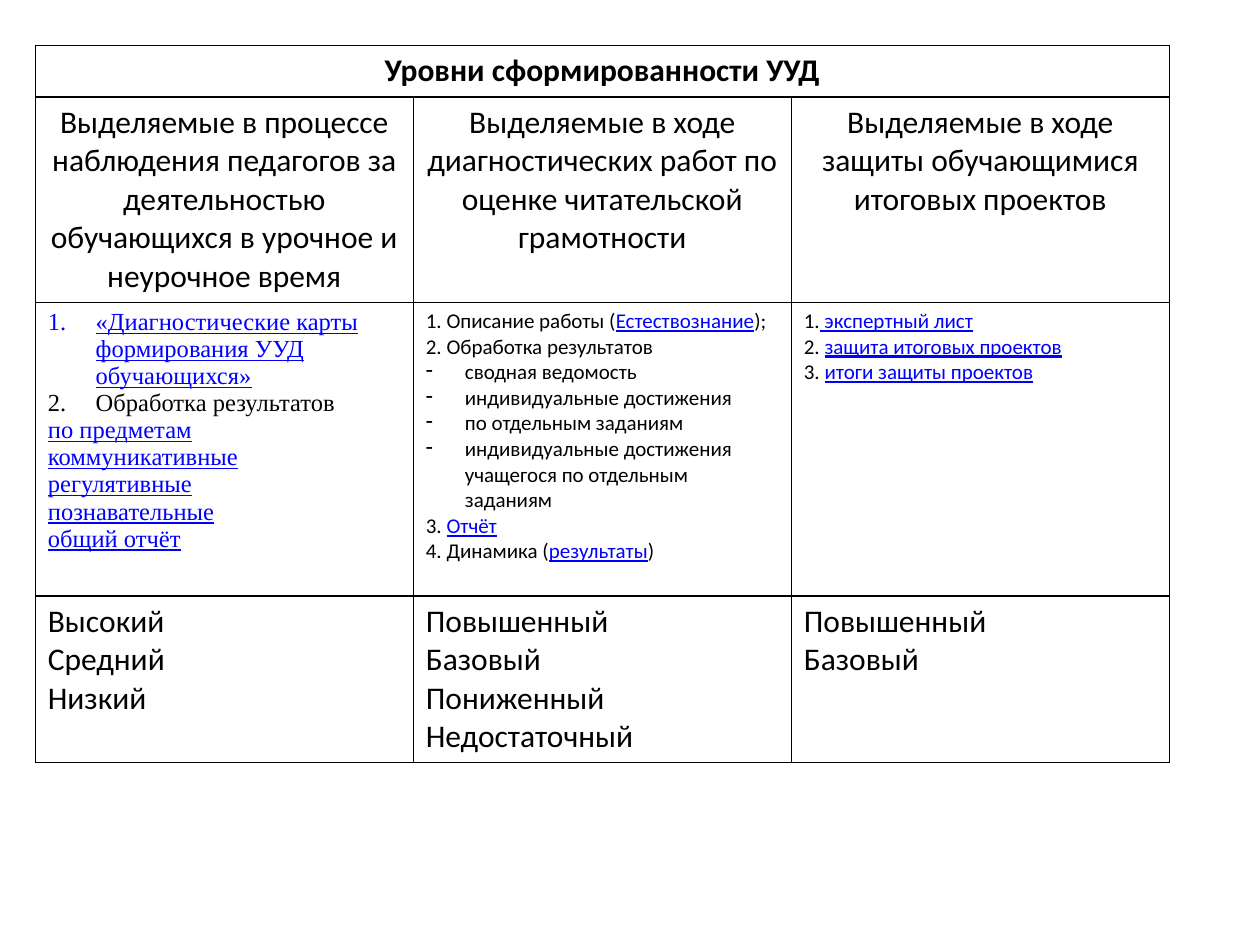
from lxml.etree import SubElement
from pptx import Presentation
from pptx.dml.color import RGBColor
from pptx.enum.text import PP_ALIGN
from pptx.oxml.ns import qn
from pptx.util import Inches, Pt

COLORS = {"text": "000000", "link": "0000FF", "paper": "FFFFFF"}

# "[...]" marks underlined link wording; a leading "# " or "- " marks a list item.
TITLE = "Уровни сформированности УУД"
METHODS = [
    "Выделяемые в процессе наблюдения педагогов за деятельностью "
    "обучающихся в урочное и неурочное время",
    "Выделяемые в ходе диагностических работ по оценке читательской грамотности",
    "Выделяемые в ходе защиты обучающимися итоговых проектов",
]
MATERIALS = [
    ["# [«Диагностические карты формирования УУД обучающихся»]",
     "# Обработка результатов",
     "[по предметам]", "[коммуникативные]", "[регулятивные]",
     "[познавательные]", "[общий отчёт]"],
    ["1. Описание работы ([Естествознание]);",
     "2. Обработка результатов",
     "- сводная ведомость",
     "- индивидуальные достижения",
     "- по отдельным заданиям",
     "- индивидуальные достижения учащегося по отдельным заданиям",
     "3. [Отчёт]",
     "4. Динамика ([результаты])"],
    ["1.[ экспертный лист]",
     "2. [защита итоговых проектов]",
     "3. [итоги защиты проектов]"],
]
MATERIAL_FONTS = [("Times New Roman", 14), ("Calibri", 12), ("Calibri", 12)]
LEVELS = [
    ["Высокий", "Средний", "Низкий"],
    ["Повышенный", "Базовый", "Пониженный", "Недостаточный"],
    ["Повышенный", "Базовый"],
]
LIST_STYLES = {
    "# ": (0.38, "buAutoNum", {"type": "arabicPeriod"}),
    "- ": (0.31, "buChar", {"char": "-"}),
}
COL_WIDTH = 3
ROW_HEIGHTS = [0.41, 1.63, 2.33, 1.32]


def rgb(name):
    return RGBColor.from_string(COLORS[name])


def frame_cell(cell):
    """Give the cell thin borders and a plain fill."""
    tcPr = cell._tc.get_or_add_tcPr()
    for side in ("a:lnL", "a:lnR", "a:lnT", "a:lnB"):
        ln = SubElement(tcPr, qn(side), w=str(Pt(1)))
        fill = SubElement(ln, qn("a:solidFill"))
        SubElement(fill, qn("a:srgbClr"), val=COLORS["text"])
    cell.fill.solid()
    cell.fill.fore_color.rgb = rgb("paper")


def make_list_item(p, indent, tag, attrs):
    pPr = p._p.get_or_add_pPr()
    pPr.set("marL", str(Inches(indent)))
    pPr.set("indent", str(-Inches(indent)))
    SubElement(pPr, qn("a:" + tag), attrs)


def add_runs(p, line, font, size, bold):
    """Write the line, with its bracketed parts styled as links."""
    for i, part in enumerate(line.replace("]", "[").split("[")):
        if not part:
            continue
        is_link = i % 2 == 1
        r = p.add_run()
        r.text = part
        r.font.name, r.font.size, r.font.bold = font, Pt(size), bold
        r.font.underline = is_link
        r.font.color.rgb = rgb("link" if is_link else "text")


def write_cell(cell, lines, font="Calibri", size=18, bold=False,
               align=PP_ALIGN.LEFT):
    tf = cell.text_frame
    for i, line in enumerate(lines):
        p = tf.add_paragraph() if i else tf.paragraphs[0]
        p.alignment = align
        if line[:2] in LIST_STYLES:
            make_list_item(p, *LIST_STYLES[line[:2]])
            line = line[2:]
        add_runs(p, line, font, size, bold)


def main():
    prs = Presentation()
    prs.slide_width, prs.slide_height = Inches(10), Inches(7.5)
    slide = prs.slides.add_slide(prs.slide_layouts[6])

    cols = len(METHODS)
    table = slide.shapes.add_table(
        len(ROW_HEIGHTS), cols, Inches(0.28), Inches(0.36),
        Inches(COL_WIDTH * cols), Inches(sum(ROW_HEIGHTS))).table
    table.first_row = table.horz_banding = False
    for col in table.columns:
        col.width = Inches(COL_WIDTH)
    for row, height in zip(table.rows, ROW_HEIGHTS):
        row.height = Inches(height)
    for cell in table.iter_cells():
        frame_cell(cell)

    table.cell(0, 0).merge(table.cell(0, cols - 1))
    write_cell(table.cell(0, 0), [TITLE], bold=True, align=PP_ALIGN.CENTER)
    for c in range(cols):
        write_cell(table.cell(1, c), [METHODS[c]], align=PP_ALIGN.CENTER)
        write_cell(table.cell(2, c), MATERIALS[c], *MATERIAL_FONTS[c])
        write_cell(table.cell(3, c), LEVELS[c])

    prs.save("out.pptx")


if __name__ == "__main__":
    main()
